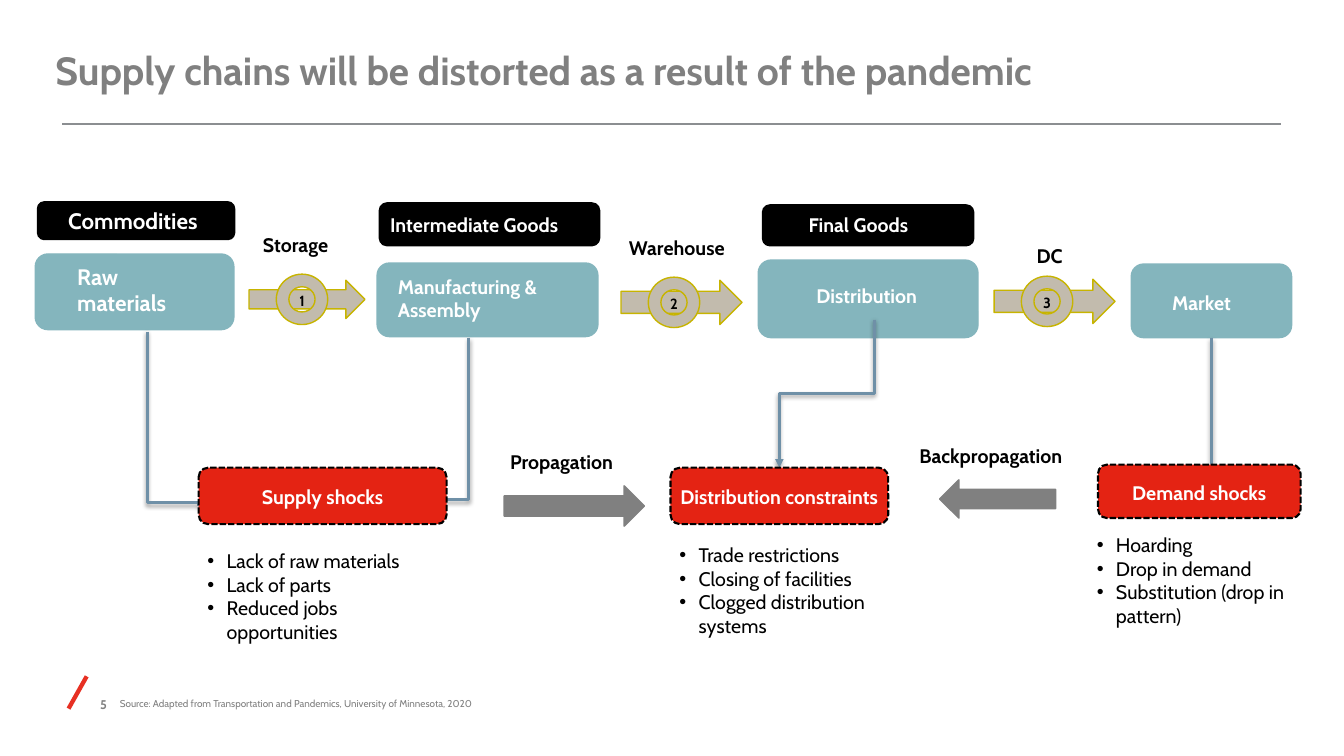
from lxml import etree
from pptx import Presentation
from pptx.dml.color import RGBColor
from pptx.enum.dml import MSO_LINE
from pptx.enum.shapes import MSO_CONNECTOR, MSO_SHAPE
from pptx.enum.text import MSO_ANCHOR as ANCHOR, MSO_AUTO_SIZE, PP_ALIGN as ALIGN
from pptx.oxml.ns import qn
from pptx.util import Inches, Pt

FONT = "Cabin"
BLACK = RGBColor(0x00, 0x00, 0x00)
WHITE = RGBColor(0xFF, 0xFF, 0xFF)
GREY = RGBColor(0x80, 0x80, 0x80)
RULE_GREY = RGBColor(0x8B, 0x8E, 0x91)
SLASH_RED = RGBColor(0xE7, 0x30, 0x23)
SHOCK_RED = RGBColor(0xE4, 0x23, 0x13)
TEAL = RGBColor(0x84, 0xB5, 0xBD)
SAND = RGBColor(0xC2, 0xBB, 0xAD)
OLIVE = RGBColor(0xC7, 0xB4, 0x00)
STEEL = RGBColor(0x6F, 0x90, 0xA7)

# box, left and top text inset, size, text
GOODS = [
    ((0.38, 2.01, 1.94, 0.36), 0.28, 0.03, 16, "Commodities"),
    ((3.77, 2.02, 2.17, 0.41), 0.08, 0.07, 14, "Intermediate Goods"),
    ((7.57, 2.04, 2.08, 0.39), 0.43, 0.05, 14, "Final Goods"),
]
STAGES = [
    ((0.35, 2.52, 1.97, 0.75), 0.38, 0.05, 16, "Raw materials"),
    ((3.74, 2.61, 2.19, 0.73), 0.17, 0.08, 14, "Manufacturing & Assembly"),
    ((7.52, 2.58, 2.18, 0.77), 0.54, 0.20, 14, "Distribution"),
    ((11.22, 2.62, 1.59, 0.73), 0.37, 0.23, 14, "Market"),
]
# arrow box, label box, label alignment, label
LINKS = [
    ((2.47, 2.78, 1.15, 0.38), (2.51, 2.26, 1.03, 0.34), ALIGN.LEFT, "Storage"),
    ((6.16, 2.78, 1.20, 0.44), (6.14, 2.29, 1.34, 0.34), ALIGN.LEFT, "Warehouse"),
    ((9.86, 2.77, 1.20, 0.44), (9.74, 2.37, 1.34, 0.34), ALIGN.CENTER, "DC"),
]
# shock box, effects box, shock, effects
SHOCKS = [
    ((1.97, 4.64, 2.46, 0.56), (1.96, 5.40, 2.47, 1.04), "Supply shocks",
     ["Lack of raw materials", "Lack of parts", "Reduced jobs opportunities"]),
    ((6.65, 4.64, 2.16, 0.56), (6.64, 5.34, 2.25, 1.04), "Distribution constraints",
     ["Trade restrictions", "Closing of facilities", "Clogged distribution systems"]),
    ((10.89, 4.61, 2.01, 0.53), (10.78, 5.24, 2.25, 1.04), "Demand shocks",
     ["Hoarding", "Drop in demand", "Substitution (drop in pattern)"]),
]
# arrow box, rotation, label box, label
FLOWS = [
    ((5.00, 4.82, 1.39, 0.40), 0, (4.96, 4.41, 1.65, 0.34), "Propagation"),
    ((9.32, 4.76, 1.15, 0.38), 180, (9.02, 4.36, 2.40, 0.34), "Backpropagation"),
]


def write(shape, text, size, color, bold=True, align=ALIGN.LEFT,
          anchor=ANCHOR.TOP, insets=(0.1, 0.05, 0.1, 0.05)):
    """Fill a shape with text; insets run left, top, right, bottom."""
    frame = shape.text_frame
    frame.text = text
    frame.word_wrap = True
    frame.auto_size = MSO_AUTO_SIZE.NONE
    frame.vertical_anchor = anchor
    (frame.margin_left, frame.margin_top,
     frame.margin_right, frame.margin_bottom) = map(Inches, insets)
    for paragraph in frame.paragraphs:
        paragraph.alignment = align
        for run in paragraph.runs:
            font = run.font
            font.name, font.size, font.bold = FONT, Pt(size), bold
            font.color.rgb = color
    return frame


def add_text(slide, box, text, size, color, **style):
    return write(slide.shapes.add_textbox(*map(Inches, box)), text, size, color, **style)


def add_block(slide, preset, box, fill, line, width=1):
    block = slide.shapes.add_shape(preset, *map(Inches, box))
    block.shadow.inherit = False
    block.fill.solid()
    block.fill.fore_color.rgb = fill
    block.line.color.rgb = line
    block.line.width = Pt(width)
    return block


def add_line(slide, kind, start, end, color, width, shadow=False):
    line = slide.shapes.add_connector(kind, *map(Inches, start + end))
    line.line.color.rgb = color
    line.line.width = Pt(width)
    effects = etree.SubElement(line._element.spPr, qn("a:effectLst"))
    if shadow:
        cast = etree.SubElement(effects, qn("a:outerShdw"), blurRad="40000",
                                dist="20000", dir="5400000", rotWithShape="0")
        tint = etree.SubElement(cast, qn("a:srgbClr"), val=str(BLACK))
        etree.SubElement(tint, qn("a:alpha"), val="38000")
    return line


def add_drop(slide, start, end, bend, arrow=False):
    """Elbow that leaves downwards and turns at the share bend of its height."""
    (x1, y1), (x2, y2) = start, end
    mid_x, mid_y = (x1 + x2) / 2, (y1 + y2) / 2
    side = 1 if x2 < x1 else -1
    along, across = side * (y2 - y1) / 2, abs(x2 - x1) / 2
    drop = add_line(slide, MSO_CONNECTOR.ELBOW, (mid_x - along, mid_y - across),
                    (mid_x + along, mid_y + across), STEEL, 2, shadow=True)
    properties = drop._element.spPr
    properties.find(qn("a:xfrm")).set("rot", str(side * 5400000 % 21600000))
    guides = properties.find(qn("a:prstGeom")).get_or_add_avLst()
    etree.SubElement(guides, qn("a:gd"), name="adj1", fmla=f"val {round(bend * 100000)}")
    if arrow:
        etree.SubElement(drop.line._get_or_add_ln(), qn("a:tailEnd"), type="triangle")


def add_frame(slide):
    title = slide.shapes.title
    title.left, title.top, title.width, title.height = map(Inches, (0.55, 0.3, 11.01, 0.79))
    write(title, "Supply chains will be distorted as a result of the pandemic", 28, GREY,
          anchor=ANCHOR.MIDDLE, insets=(0, 0, 0, 0))
    add_line(slide, MSO_CONNECTOR.STRAIGHT, (0.62, 1.23), (12.71, 1.23), RULE_GREY, 1.65)
    add_line(slide, MSO_CONNECTOR.STRAIGHT, (0.68, 7.03), (0.86, 6.71), SLASH_RED, 3.05)
    add_text(slide, (0.49, 6.88, 0.57, 0.23), "5", 9, GREY, align=ALIGN.RIGHT,
             anchor=ANCHOR.BOTTOM, insets=(0, 0, 0, 0.05))
    add_text(slide, (1.09, 6.84, 7.83, 0.28),
             "Source: Adapted from Transportation and Pandemics, University of Minnesota, 2020",
             7.1, GREY, bold=False, anchor=ANCHOR.MIDDLE)


def add_step(slide, box, left, top, size, text, fill, line_width):
    step = add_block(slide, MSO_SHAPE.ROUNDED_RECTANGLE, box, fill, fill, line_width)
    write(step, text, size, WHITE, insets=(left, top, min(left, 0.4), 0))
    return step


def add_link(slide, number, box, label_box, align, label):
    left, top, _, height = box
    ring_w, ring_h = 0.51, 0.5
    add_block(slide, MSO_SHAPE.RIGHT_ARROW, box, SAND, OLIVE)
    ring = add_block(slide, MSO_SHAPE.DONUT,
                     (left + 0.27, top + (height - ring_h) / 2, ring_w, ring_h), SAND, OLIVE)
    write_centred(ring, str(number), 10.5, BLACK)
    add_text(slide, label_box, label, 14, BLACK, align=align)


def write_centred(shape, text, size, color):
    frame = write(shape, text, size, color, align=ALIGN.CENTER,
                  anchor=ANCHOR.MIDDLE, insets=(0.04,) * 4)
    frame.paragraphs[0].line_spacing = 1.1


def add_shock(slide, box, effects_box, shock, effects):
    block = add_block(slide, MSO_SHAPE.ROUNDED_RECTANGLE, box, SHOCK_RED, BLACK, 1.5)
    block.line.dash_style = MSO_LINE.SQUARE_DOT
    write_centred(block, shock, 14, WHITE)
    frame = add_text(slide, effects_box, "\n".join(effects), 14, BLACK, bold=False)
    for effect in frame.paragraphs:
        properties = effect._p.get_or_add_pPr()
        properties.set("marL", str(Inches(0.19)))
        properties.set("indent", str(-Inches(0.19)))
        etree.SubElement(properties, qn("a:buFont"), typeface="Arial")
        etree.SubElement(properties, qn("a:buChar"), char="•")


def add_flow(slide, box, rotation, label_box, label):
    add_block(slide, MSO_SHAPE.RIGHT_ARROW, box, GREY, GREY).rotation = rotation
    add_text(slide, label_box, label, 14, BLACK)


def add_drops(slide, market):
    add_drop(slide, (8.67, 3.17), (7.73, 4.64), 0.5, arrow=True)
    add_drop(slide, (1.46, 3.29), (1.97, 5.02), 0.98)
    add_drop(slide, (4.65, 3.35), (4.38, 5.02), 0.96)
    demand = add_line(slide, MSO_CONNECTOR.STRAIGHT, (12.02, 3.35), (12.02, 4.86),
                      STEEL, 2, shadow=True)
    demand.begin_connect(market, 2)
    demand.end_x = demand.begin_x


def main():
    deck = Presentation()
    deck.slide_width, deck.slide_height = Inches(13.33), Inches(7.5)
    slide = deck.slides.add_slide(deck.slide_layouts[5])
    add_frame(slide)
    for goods in GOODS:
        add_step(slide, *goods, BLACK, 2)
    stages = [add_step(slide, *stage, TEAL, 1) for stage in STAGES]
    for number, link in enumerate(LINKS, 1):
        add_link(slide, number, *link)
    add_drops(slide, stages[-1])
    for shock in SHOCKS:
        add_shock(slide, *shock)
    for flow in FLOWS:
        add_flow(slide, *flow)
    deck.save("out.pptx")


if __name__ == "__main__":
    main()
